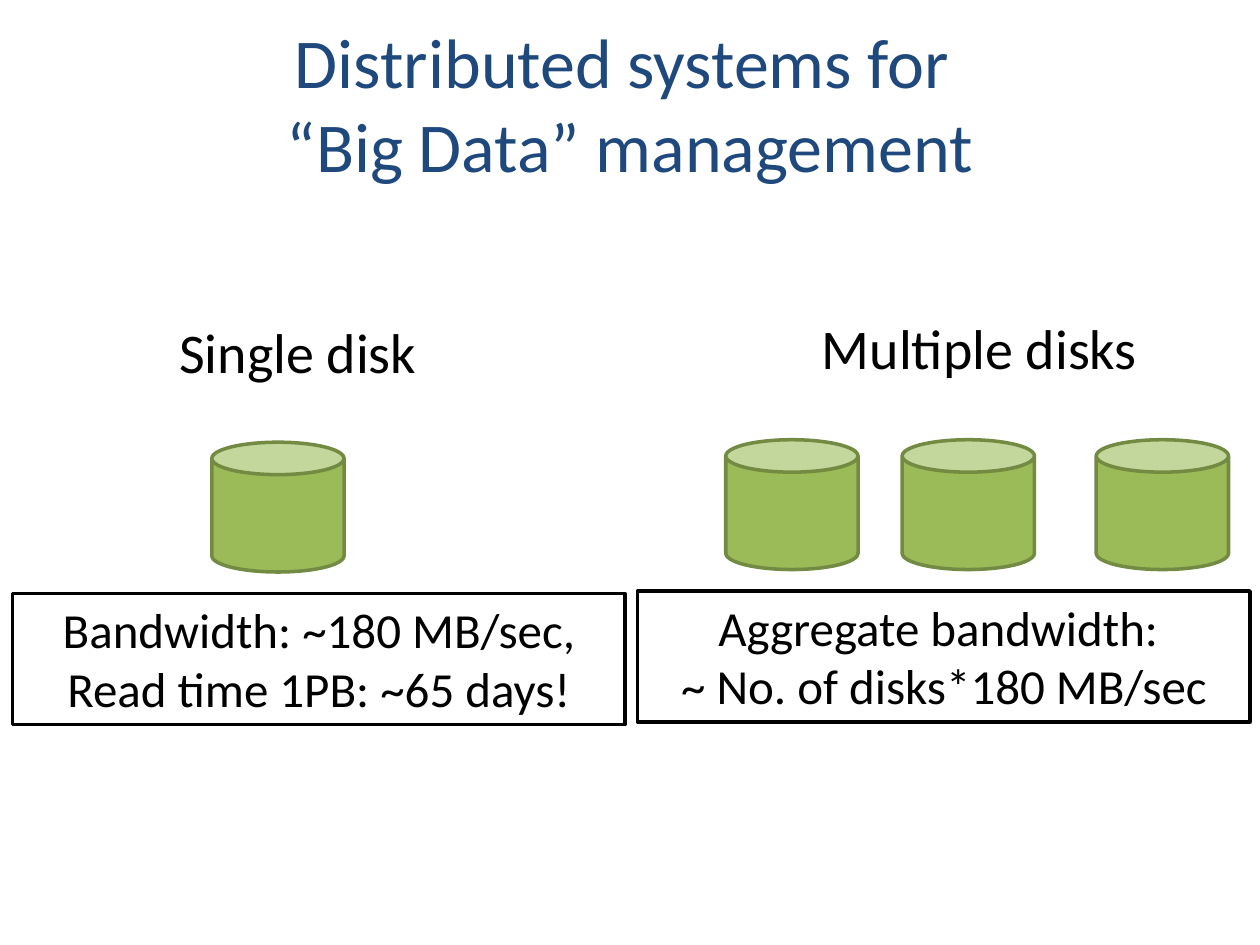
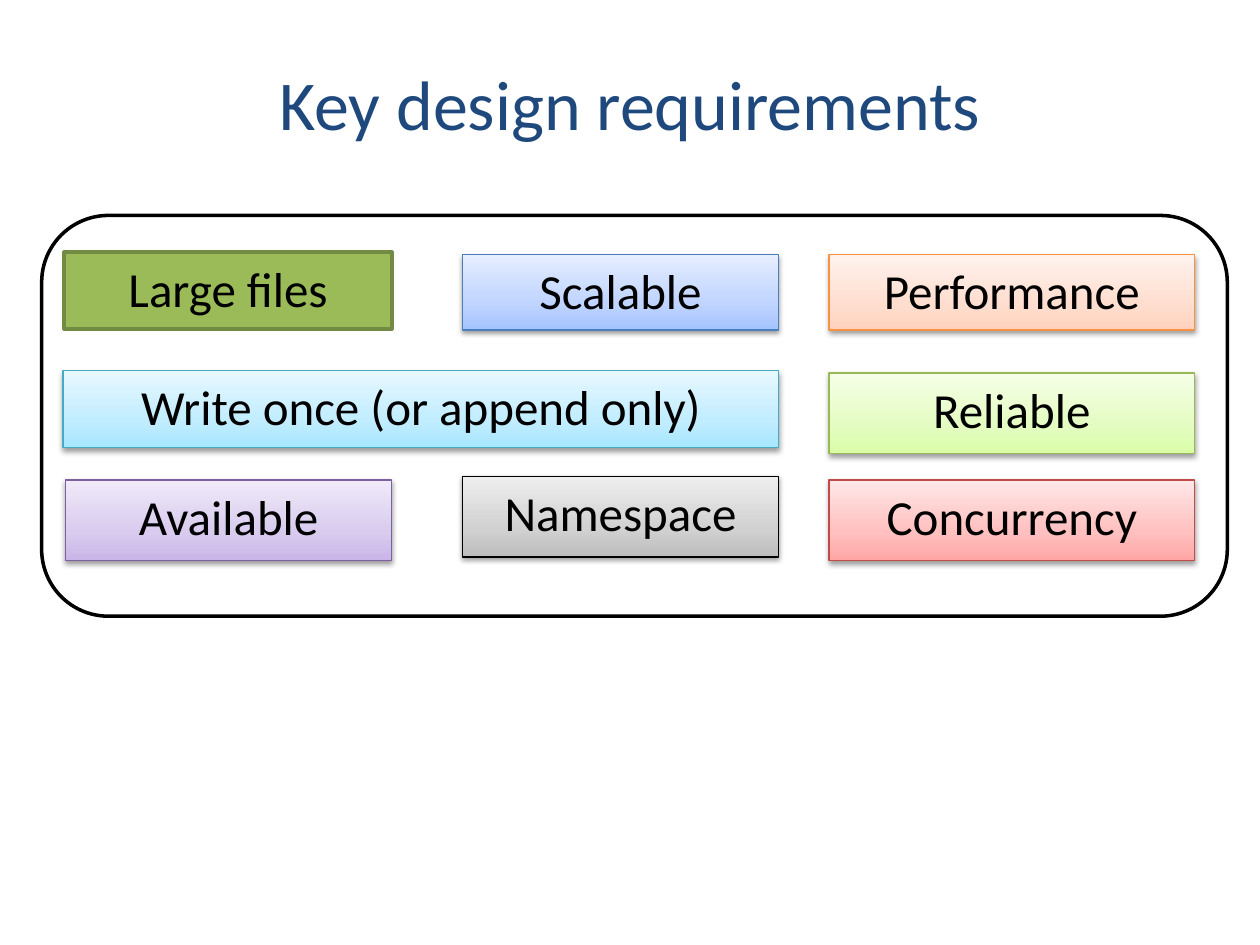
import copy
import dataclasses
import typing

import lxml.etree
import pptx
import pptx.dml.color
import pptx.enum.shapes
import pptx.enum.text
import pptx.oxml.ns
import pptx.util

Pt = pptx.util.Pt
RGBColor = pptx.dml.color.RGBColor
ShapeKind = pptx.enum.shapes.MSO_SHAPE
Align = pptx.enum.text.PP_ALIGN
Anchor = pptx.enum.text.MSO_ANCHOR
qn = pptx.oxml.ns.qn

FONT = "Calibri"
BLACK = RGBColor(0x00, 0x00, 0x00)
WHITE = RGBColor(0xFF, 0xFF, 0xFF)
TITLE_BLUE = RGBColor(0x1F, 0x49, 0x7D)
GREEN = RGBColor(0x9B, 0xBB, 0x59)
DARK_GREEN = RGBColor(0x73, 0x8A, 0x42)


@dataclasses.dataclass(frozen=True)
class Palette:
    """Line colour and the fill colours, from bottom to top."""
    line: RGBColor
    fills: tuple[RGBColor, ...]


def palette(line: str, *fills: str) -> Palette:
    return Palette(RGBColor.from_string(line), tuple(map(RGBColor.from_string, fills)))


ORANGE = palette("F69240", "FFD2BD", "FFDED0", "FFF2ED")
BLUE = palette("4B7EBC", "A4C4FF", "BFD4FF", "E6EEFF")
PURPLE = palette("7D60A0", "C9B5E8", "D8CBEE", "F0EAF9")
LIME = palette("98B955", "DAFDA7", "E4FCC2", "F5FFE7")
RED = palette("BF4C48", "FFA6A5", "FFC0BF", "FFE7E7")
GREY = palette("000000", "BDBDBD", "D1D1D1", "EEEEEE")
AQUA = palette("46AAC5", "A7E6FF", "C1EDFF", "E7F8FF")
SOLID_GREEN = Palette(DARK_GREEN, (GREEN,))
GRADIENT_POSITIONS = (0.0, 0.35, 1.0)


class Box(typing.NamedTuple):
    """Left, top, width and height in points."""
    left: float
    top: float
    width: float
    height: float

    def lengths(self) -> list[int]:
        return [Pt(value) for value in self]


@dataclasses.dataclass(frozen=True)
class DiskSetup:
    label: str
    label_box: Box
    disk_lefts: tuple[float, ...]
    disk_top: float
    summary: str
    summary_left: float


@dataclasses.dataclass(frozen=True)
class Requirement:
    text: str
    box: Box
    colours: Palette


DISK_SETUPS = (
    DiskSetup("Single disk", Box(90.7, 177.8, 159.1, 46.1), (121,), 252.7,
              "Bandwidth: ~180 MB/sec,\nRead time 1PB: ~65 days!", 7.2),
    DiskSetup("Multiple disks", Box(458.6, 175.7, 202.3, 46.1), (414.7, 515.5, 626.4), 251.3,
              "Aggregate bandwidth: \n~ No. of disks*180 MB/sec", 364.3),
)
DISK_SIZE = (75.6, 74.2)
SUMMARY_SIZE = (350, 74.9)
SUMMARY_DROP = 86.4

MIDDLE, MIDDLE_WIDTH = 264.2, 180.7
RIGHT, RIGHT_WIDTH = 473.8, 208.8
REQUIREMENTS = (
    Requirement("Large files", Box(36.7, 144, 187.2, 43.9), SOLID_GREEN),
    Requirement("Scalable", Box(MIDDLE, 145.4, MIDDLE_WIDTH, 43.2), BLUE),
    Requirement("Performance", Box(RIGHT, 145.4, RIGHT_WIDTH, 43.2), ORANGE),
    Requirement("Write once (or append only)", Box(36, 211.7, 409, 43.9), AQUA),
    Requirement("Reliable", Box(RIGHT, 213.1, RIGHT_WIDTH, 46.1), LIME),
    Requirement("Available", Box(37.4, 274.3, 186.5, 46.1), PURPLE),
    Requirement("Namespace", Box(MIDDLE, 272.2, MIDDLE_WIDTH, 46.1), GREY),
    Requirement("Concurrency", Box(RIGHT, 274.3, RIGHT_WIDTH, 46.1), RED),
)


def write_text(shape, text: str, *, size: float = 28, color: RGBColor = BLACK,
               anchor: Anchor = Anchor.TOP, wrap: bool = True) -> None:
    frame = shape.text_frame
    frame.text = text
    frame.word_wrap = wrap
    frame.vertical_anchor = anchor
    for paragraph in frame.paragraphs:
        paragraph.alignment = Align.CENTER
        for run in paragraph.runs:
            run.font.name = FONT
            run.font.size = Pt(size)
            run.font.color.rgb = color


def add_titled_slide(presentation, title: str):
    slide = presentation.slides.add_slide(presentation.slide_layouts[5])
    shape = slide.shapes.title
    shape.left, shape.top, shape.width, shape.height = Box(36, 13.7, 648, 90).lengths()
    write_text(shape, title, size=40, color=TITLE_BLUE, anchor=Anchor.MIDDLE)
    return slide


def add_figure(shapes, kind: ShapeKind, box: Box, line: RGBColor,
               fill: RGBColor | None = None, line_width: float = 2):
    shape = shapes.add_shape(kind, *box.lengths())
    shape.shadow.inherit = False
    shape.line.color.rgb = line
    shape.line.width = Pt(line_width)
    if fill is None:
        shape.fill.background()
    else:
        shape.fill.solid()
        shape.fill.fore_color.rgb = fill
    return shape


def fill_gradient(shape, colors: tuple[RGBColor, ...]) -> None:
    shape.fill.gradient()
    shape.fill.gradient_angle = 90
    stop_list = next(shape.element.iter(qn("a:gsLst")))
    stop_list.append(copy.deepcopy(stop_list[0]))
    for stop, color, position in zip(shape.fill.gradient_stops, colors, GRADIENT_POSITIONS):
        stop.color.rgb = color
        stop.position = position


def add_shadow(shape) -> None:
    effects = shape.element.spPr.find(qn("a:effectLst"))
    shadow = lxml.etree.SubElement(
        effects, qn("a:outerShdw"), blurRad=str(Pt(3.1)), dist=str(Pt(1.6)),
        dir="5400000", rotWithShape="0")
    color = lxml.etree.SubElement(shadow, qn("a:srgbClr"), val=str(BLACK))
    lxml.etree.SubElement(color, qn("a:alpha"), val="38000")


def add_disk_setup(slide, setup: DiskSetup) -> None:
    shapes = slide.shapes.add_group_shape().shapes
    summary_box = Box(setup.summary_left, setup.disk_top + SUMMARY_DROP, *SUMMARY_SIZE)
    summary = add_figure(shapes, ShapeKind.RECTANGLE, summary_box, BLACK, WHITE)
    write_text(summary, setup.summary)
    label = shapes.add_textbox(*setup.label_box.lengths())
    write_text(label, setup.label, size=32, wrap=False)
    for left in setup.disk_lefts:
        add_figure(shapes, ShapeKind.CAN, Box(left, setup.disk_top, *DISK_SIZE),
                   DARK_GREEN, GREEN)


def add_requirement(slide, requirement: Requirement) -> None:
    colours = requirement.colours
    graded = len(colours.fills) > 1
    shape = add_figure(slide.shapes, ShapeKind.RECTANGLE, requirement.box, colours.line,
                       colours.fills[0], 0.75 if graded else 2)
    if graded:
        fill_gradient(shape, colours.fills)
        add_shadow(shape)
    write_text(shape, requirement.text)


def main() -> None:
    presentation = pptx.Presentation()
    presentation.slide_width, presentation.slide_height = Pt(720), Pt(540)

    slide = add_titled_slide(presentation, "Distributed systems for \v“Big Data” management")
    for setup in DISK_SETUPS:
        add_disk_setup(slide, setup)

    slide = add_titled_slide(presentation, "Key design requirements")
    add_figure(slide.shapes, ShapeKind.ROUNDED_RECTANGLE, Box(23.8, 123.1, 677.5, 229), BLACK)
    for requirement in REQUIREMENTS:
        add_requirement(slide, requirement)

    presentation.save("out.pptx")


if __name__ == "__main__":
    main()
